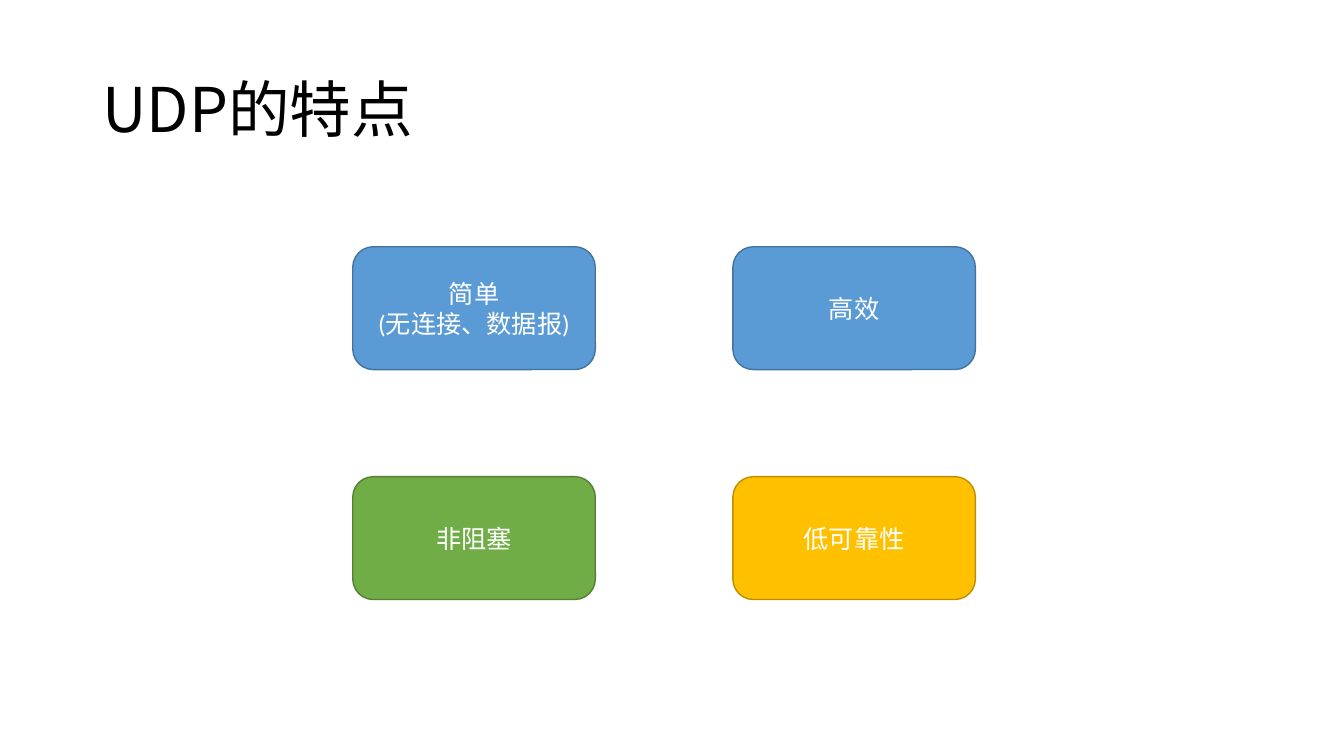
import pptx
import pptx.dml.color
import pptx.enum.lang
import pptx.enum.shapes
import pptx.enum.text
import pptx.oxml.ns
import pptx.util
from lxml import etree


def color(code):
    return pptx.dml.color.RGBColor.from_string(code)


class Slide:
    """Holds the style and the current page, and draws each kind of element."""

    SCALE = 9525
    LATIN_FONT = "Calibri"
    CHINESE_FONT = "Noto Sans CJK SC"
    TITLE_SIZE = 44
    LABEL_SIZE = 18

    def __init__(self, deck):
        self.page = deck.slides.add_slide(deck.slide_layouts[6])

    def place(self, *lengths):
        return [pptx.util.Emu(length * self.SCALE) for length in lengths]

    def label(self, shape, text, size, font, code, align):
        frame = shape.text_frame
        frame.word_wrap = True
        frame.vertical_anchor = pptx.enum.text.MSO_ANCHOR.MIDDLE
        frame.text = text
        for para in frame.paragraphs:
            para.alignment = align
            for span in para.runs:
                span.font.size = pptx.util.Pt(size)
                span.font.name = font
                span.font.language_id = pptx.enum.lang.MSO_LANGUAGE_ID.SIMPLIFIED_CHINESE
                span.font.color.rgb = color(code)
                east_asian = etree.SubElement(
                    span._r.get_or_add_rPr(), pptx.oxml.ns.qn("a:ea"))
                east_asian.set("typeface", self.CHINESE_FONT)

    def title(self, text, left, top, width, height):
        box = self.page.shapes.add_textbox(*self.place(left, top, width, height))
        self.label(box, text, self.TITLE_SIZE, self.CHINESE_FONT, "000000",
                   pptx.enum.text.PP_ALIGN.LEFT)
        box.text_frame.paragraphs[0].line_spacing = 0.9

    def card(self, text, left, top, width, height, fill, line):
        card = self.page.shapes.add_shape(
            pptx.enum.shapes.MSO_SHAPE.ROUNDED_RECTANGLE,
            *self.place(left, top, width, height))
        card.shadow.inherit = False
        card.fill.solid()
        card.fill.fore_color.rgb = color(fill)
        card.line.color.rgb = color(line)
        card.line.width = pptx.util.Pt(1)
        self.label(card, text, self.LABEL_SIZE, self.LATIN_FONT, "FFFFFF",
                   pptx.enum.text.PP_ALIGN.CENTER)


def main():
    deck = pptx.Presentation()
    deck.slide_width = pptx.util.Emu(1280 * Slide.SCALE)
    deck.slide_height = pptx.util.Emu(720 * Slide.SCALE)
    slide = Slide(deck)
    slide.title("UDP的特点", 88, 38, 1104, 139)

    blue, green, gold = ("5B9BD5", "43739E"), ("70AD47", "538035"), ("FFC000", "BD8E00")
    features = [
        ("简单\n(无连接、数据报)", blue),
        ("高效", blue),
        ("非阻塞", green),
        ("低可靠性", gold),
    ]
    for index, (text, (fill, line)) in enumerate(features):
        row, column = divmod(index, 2)
        slide.card(text, 336 + 362 * column, 235 + 219 * row, 231, 117, fill, line)

    deck.save("out.pptx")


if __name__ == "__main__":
    main()
